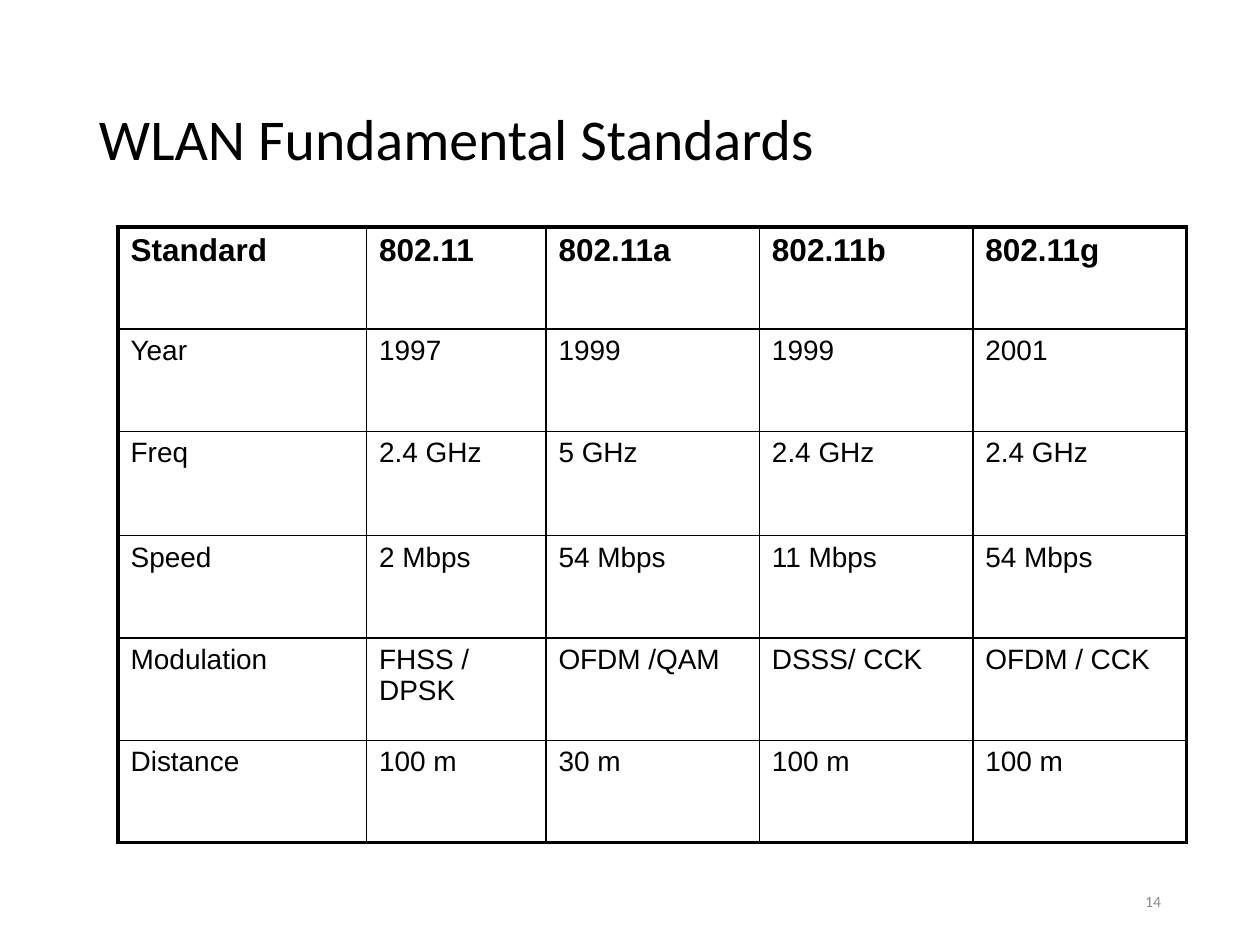
from dataclasses import dataclass

from lxml.etree import SubElement
from pptx import Presentation
from pptx.dml.color import RGBColor
from pptx.enum.text import MSO_ANCHOR as Anchor, PP_ALIGN as Align
from pptx.oxml.ns import qn
from pptx.util import Pt


@dataclass(frozen=True)
class Theme:
    ink: str = "000000"
    muted: str = "8C8C8C"
    heading_font: str = "Calibri"
    table_font: str = "Arial"
    title_size: float = 33
    header_size: float = 18
    body_size: float = 16
    number_size: float = 9
    outer_line: float = 2.25
    inner_line: float = 1


THEME = Theme()

STANDARDS = [
    ["Standard", "802.11", "802.11a", "802.11b", "802.11g"],
    ["Year", "1997", "1999", "1999", "2001"],
    ["Freq", "2.4 GHz", "5 GHz", "2.4 GHz", "2.4 GHz"],
    ["Speed", "2 Mbps", "54 Mbps", "11 Mbps", "54 Mbps"],
    ["Modulation", "FHSS / DPSK", "OFDM /QAM", "DSSS/ CCK", "OFDM / CCK"],
    ["Distance", "100 m", "30 m", "100 m", "100 m"],
]
COLUMN_WIDTHS = [142, 102.5, 122, 122, 122]
ROW_HEIGHTS = [58.5, 58.5, 59.5, 58.5, 58.5, 58.5]


def write_text(frame, text, *, size, font, color=THEME.ink, bold=False,
               align=Align.LEFT, line_spacing=1.0):
    frame.word_wrap = True
    paragraph = frame.paragraphs[0]
    paragraph.alignment = align
    paragraph.line_spacing = line_spacing
    run = paragraph.add_run()
    run.text = text
    run.font.size = Pt(size)
    run.font.name = font
    run.font.bold = bold
    run.font.color.rgb = RGBColor.from_string(color)


def add_label(slide, box, text, **text_format):
    shape = slide.shapes.add_textbox(*map(Pt, box))
    shape.text_frame.vertical_anchor = Anchor.MIDDLE
    write_text(shape.text_frame, text, **text_format)


def set_borders(cell, widths):
    properties = cell._tc.get_or_add_tcPr()
    for side, width in widths.items():
        line = SubElement(properties, qn(f"a:ln{side}"), w=str(Pt(width)))
        fill = SubElement(line, qn("a:solidFill"))
        SubElement(fill, qn("a:srgbClr"), val=THEME.ink)


def add_standards_table(slide, box):
    row_count, column_count = len(STANDARDS), len(STANDARDS[0])
    table = slide.shapes.add_table(row_count, column_count, *map(Pt, box)).table
    table.first_row = table.horz_banding = False
    for column, width in zip(table.columns, COLUMN_WIDTHS):
        column.width = Pt(width)
    for row, height in zip(table.rows, ROW_HEIGHTS):
        row.height = Pt(height)

    def line_width(is_outer):
        return THEME.outer_line if is_outer else THEME.inner_line

    for r, values in enumerate(STANDARDS):
        is_header = r == 0
        for c, value in enumerate(values):
            cell = table.cell(r, c)
            set_borders(cell, {
                "L": line_width(c == 0),
                "R": line_width(c == column_count - 1),
                "T": line_width(r == 0),
                "B": line_width(r == row_count - 1),
            })
            cell.fill.background()
            write_text(cell.text_frame, value, font=THEME.table_font, bold=is_header,
                       size=THEME.header_size if is_header else THEME.body_size)


def main():
    presentation = Presentation()
    presentation.slide_width, presentation.slide_height = Pt(720), Pt(540)
    slide = presentation.slides.add_slide(presentation.slide_layouts[6])

    # Title
    add_label(slide, (49.5, 28.75, 621, 104.5), "WLAN Fundamental Standards",
              size=THEME.title_size, font=THEME.heading_font, line_spacing=0.9)

    # Comparison of the standards
    add_standards_table(slide, (67.5, 129.6, sum(COLUMN_WIDTHS), sum(ROW_HEIGHTS)))

    # Slide number
    add_label(slide, (508.5, 500.5, 162, 28.75), "14", size=THEME.number_size,
              font=THEME.heading_font, color=THEME.muted, align=Align.RIGHT)

    presentation.save("out.pptx")


if __name__ == "__main__":
    main()
